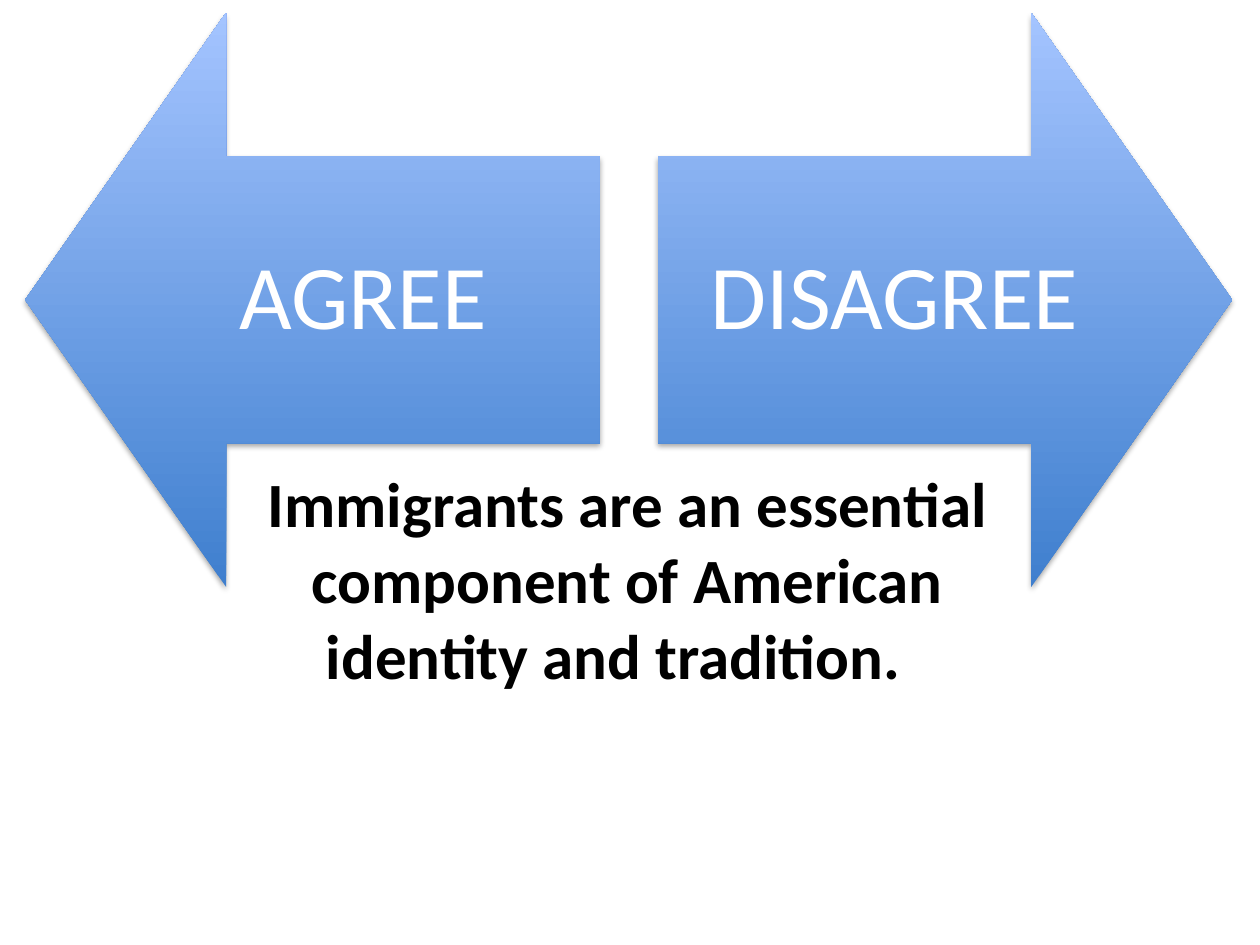
from lxml.etree import SubElement
from pptx import Presentation
from pptx.dml.color import RGBColor
from pptx.enum.shapes import MSO_SHAPE
from pptx.enum.text import MSO_ANCHOR, MSO_AUTO_SIZE, PP_ALIGN
from pptx.oxml.ns import qn
from pptx.util import Inches, Pt


def color(hex_value):
    return RGBColor.from_string(hex_value)


def write(frame, text, size, ink, font="Calibri", bold=False, spacing=None):
    paragraph = frame.paragraphs[0]
    paragraph.alignment = PP_ALIGN.CENTER
    paragraph.line_spacing = spacing
    run = paragraph.add_run()
    run.text = text
    run.font.name = font
    run.font.size = Pt(size)
    run.font.bold = bold
    run.font.color.rgb = color(ink)


class DebateSlide:
    dark, light = "3F7FCE", "A4C4FF"
    label_ink, statement_ink = "FFFFFF", "000000"

    def __init__(self, presentation):
        self.slide = presentation.slides.add_slide(presentation.slide_layouts[6])

    def arrow(self, direction, left, top, size):
        arrow = self.slide.shapes.add_shape(
            direction, Inches(left), Inches(top), Inches(size), Inches(size))
        arrow.adjustments[0] = 0.5
        arrow.adjustments[1] = 0.35
        arrow.line.fill.background()
        # Dark at the bottom, light at the top
        arrow.fill.gradient()
        arrow.fill.gradient_angle = 90
        for stop, shade in zip(arrow.fill.gradient_stops, (self.dark, self.light)):
            stop.color.rgb = color(shade)
        self.soft_shadow(arrow)

    def soft_shadow(self, shape):
        shape.shadow.inherit = False
        effects = shape._element.spPr.find(qn("a:effectLst"))
        shadow = SubElement(effects, qn("a:outerShdw"), blurRad=str(Pt(3.1)),
                            dist=str(Pt(1.8)), dir="5400000", rotWithShape="0")
        black = SubElement(shadow, qn("a:srgbClr"), val="000000")
        SubElement(black, qn("a:alpha"), val="35000")

    def text_box(self, left, top, width, height):
        box = self.slide.shapes.add_textbox(
            Inches(left), Inches(top), Inches(width), Inches(height))
        box.text_frame.word_wrap = True
        return box.text_frame

    def label(self, text, left, top, width, height):
        frame = self.text_box(left, top, width, height)
        frame.auto_size = MSO_AUTO_SIZE.NONE
        frame.vertical_anchor = MSO_ANCHOR.MIDDLE
        frame.margin_left = frame.margin_right = Inches(0.4)
        frame.margin_top = frame.margin_bottom = Inches(0.4)
        write(frame, text, 52, self.label_ink, spacing=0.9)

    def statement(self, text, left, top, width, height):
        frame = self.text_box(left, top, width, height)
        frame.auto_size = MSO_AUTO_SIZE.SHAPE_TO_FIT_TEXT
        write(frame, text, 36, self.statement_ink, bold=True)


def main():
    presentation = Presentation()
    presentation.slide_width = Inches(10)
    presentation.slide_height = Inches(7.5)
    debate = DebateSlide(presentation)

    # Opposing arrows, each with its label over the shaft
    size, top = 4.56, 0.1
    label_width = 3.76
    sides = (
        ("AGREE", MSO_SHAPE.LEFT_ARROW, 0.2, size - label_width),
        ("DISAGREE", MSO_SHAPE.RIGHT_ARROW, 5.22, 0),
    )
    for answer, direction, left, label_offset in sides:
        debate.arrow(direction, left, top, size)
        debate.label(answer, left + label_offset, top + size / 4,
                     label_width, size / 2)

    # Statement to debate
    debate.statement(
        "Immigrants are an essential component of American identity and tradition.  ",
        1.97, 3.64, 6.02, 2.22)

    presentation.save("out.pptx")


if __name__ == "__main__":
    main()
